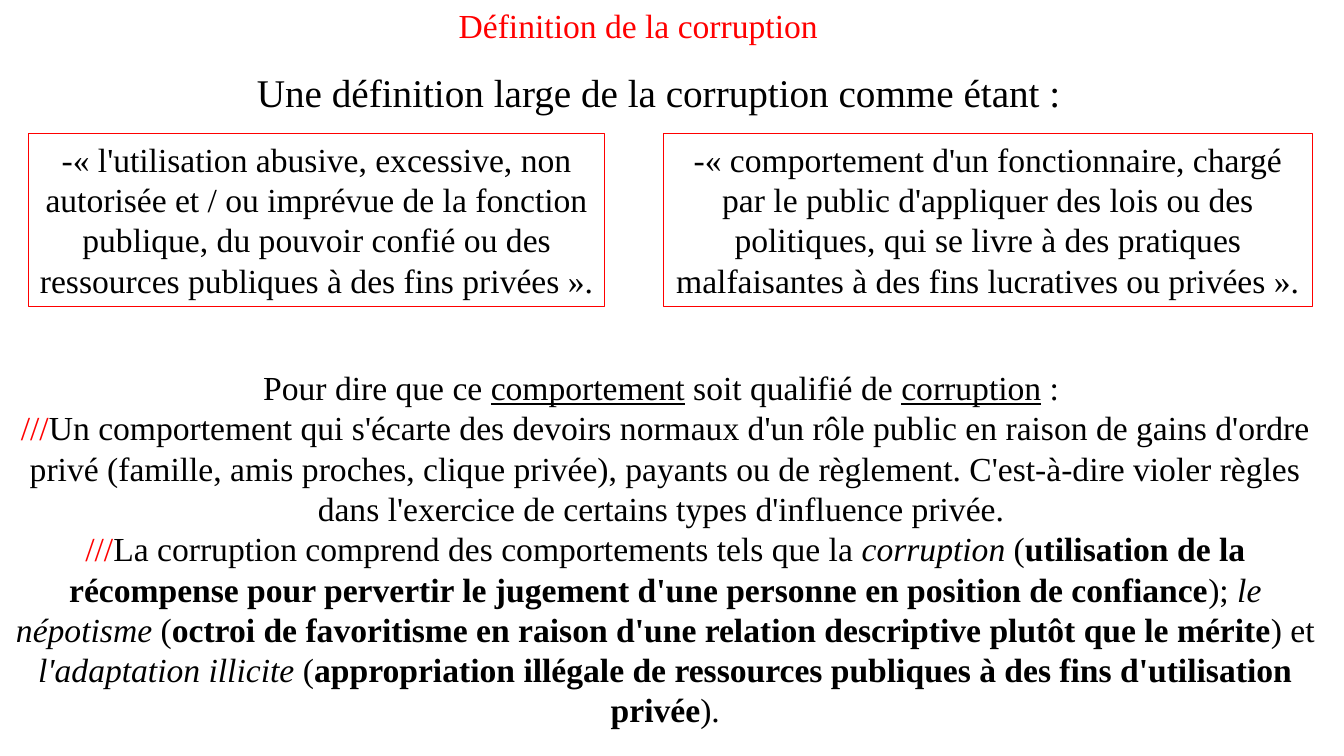
import pptx
import pptx.dml.color
import pptx.enum.shapes
import pptx.enum.text
import pptx.util

Pt = pptx.util.Pt
ALIGN = pptx.enum.text.PP_ALIGN
ANCHOR = pptx.enum.text.MSO_ANCHOR
BLACK, RED = "000000", "FF0000"

DEFINITIONS = [
    (20.2, 411.8, "-« l'utilisation abusive, excessive, non autorisée et / ou imprévue de la "
     "fonction publique, du pouvoir confié ou des ressources publiques à des fins privées ». "),
    (473.8, 463.7, "-« comportement d'un fonctionnaire, chargé par le public d'appliquer des lois "
     "ou des politiques, qui se livre à des pratiques malfaisantes à des fins lucratives ou privées »."),
]

CRITERIA = [
    [("Pour dire que ce ", ""), ("comportement", "underline"), (" soit qualifié de ", ""),
     ("corruption", "underline"), (" : ", "")],
    [("///", "red"),
     ("Un comportement qui s'écarte des devoirs normaux d'un rôle public en raison de gains d'ordre "
      "privé (famille, amis proches, clique privée), payants ou de règlement. C'est-à-dire violer "
      "règles dans l'exercice de certains types d'influence privée. ", "")],
    [("///", "red"), ("La corruption comprend des comportements tels que la ", ""),
     ("corruption", "italic"), (" (", ""),
     ("utilisation de la récompense pour pervertir le jugement d'une personne en position de confiance",
      "bold"),
     ("); ", ""), ("le népotisme", "italic"), (" (", ""),
     ("octroi de favoritisme en raison d'une relation descriptive plutôt que le mérite", "bold"),
     (") et ", ""), ("l'adaptation illicite", "italic"), (" (", ""),
     ("appropriation illégale de ressources publiques à des fins d'utilisation privée", "bold"),
     (").", "")],
]


def color(value):
    """Return the colour for a hex string."""
    return pptx.dml.color.RGBColor.from_string(value)


def style_font(font, size=24, tint=BLACK):
    """Apply the slide's typeface with a size and a colour."""
    font.name = "Times New Roman"
    font.size = Pt(size)
    font.color.rgb = color(tint)


def write_line(frame, text, size, tint):
    """Write one unwrapped, left-aligned line in a text frame."""
    frame.text = text
    frame.word_wrap = False
    frame.vertical_anchor = ANCHOR.TOP
    frame.paragraphs[0].alignment = ALIGN.LEFT
    style_font(frame.paragraphs[0].runs[0].font, size, tint)


def add_title(slide, left, top, width, height):
    """Place the red slide title."""
    title = slide.shapes.title
    title.left, title.top, title.width, title.height = map(Pt, (left, top, width, height))
    write_line(title.text_frame, "Définition de la corruption", 24, RED)


def add_heading(slide, left, top, width, height):
    """Place the line that introduces the definitions."""
    heading = slide.shapes.add_textbox(Pt(left), Pt(top), Pt(width), Pt(height))
    write_line(heading.text_frame, "Une définition large de la corruption comme étant :", 28, BLACK)


def add_definition(slide, left, top, width, height, quote):
    """Draw a red-framed box holding one quoted definition."""
    definition = slide.shapes.add_shape(
        pptx.enum.shapes.MSO_SHAPE.RECTANGLE, Pt(left), Pt(top), Pt(width), Pt(height))
    definition.shadow.inherit = False
    definition.fill.background()
    definition.line.color.rgb = color(RED)
    definition.line.width = Pt(0.75)
    frame = definition.text_frame
    frame.word_wrap = True
    frame.vertical_anchor = ANCHOR.TOP
    frame.text = quote
    frame.paragraphs[0].alignment = ALIGN.CENTER
    style_font(frame.paragraphs[0].runs[0].font)


def add_criteria(slide, left, top, width, height):
    """Write the centred criteria with their emphasised words."""
    criteria = slide.shapes.add_textbox(Pt(left), Pt(top), Pt(width), Pt(height))
    frame = criteria.text_frame
    frame.word_wrap = True
    for index, pieces in enumerate(CRITERIA):
        paragraph = frame.add_paragraph() if index else frame.paragraphs[0]
        paragraph.alignment = ALIGN.CENTER
        for text, emphasis in pieces:
            run = paragraph.add_run()
            run.text = text
            style_font(run.font, tint=RED if emphasis == "red" else BLACK)
            if emphasis in ("underline", "italic", "bold"):
                setattr(run.font, emphasis, True)


def main():
    """Build the slide and save it."""
    deck = pptx.Presentation()
    deck.slide_width, deck.slide_height = Pt(960), Pt(540)
    slide = deck.slides.add_slide(deck.slide_layouts[5])
    add_heading(slide, 176.4, 45.4, 594, 41)
    add_title(slide, 320.4, 0, 273.6, 36)
    for left, width, quote in DEFINITIONS:
        add_definition(slide, left, 95.5, width, 123.8, quote)
    add_criteria(slide, 4.3, 258.5, 941.8, 269.3)
    deck.save("out.pptx")


if __name__ == "__main__":
    main()
